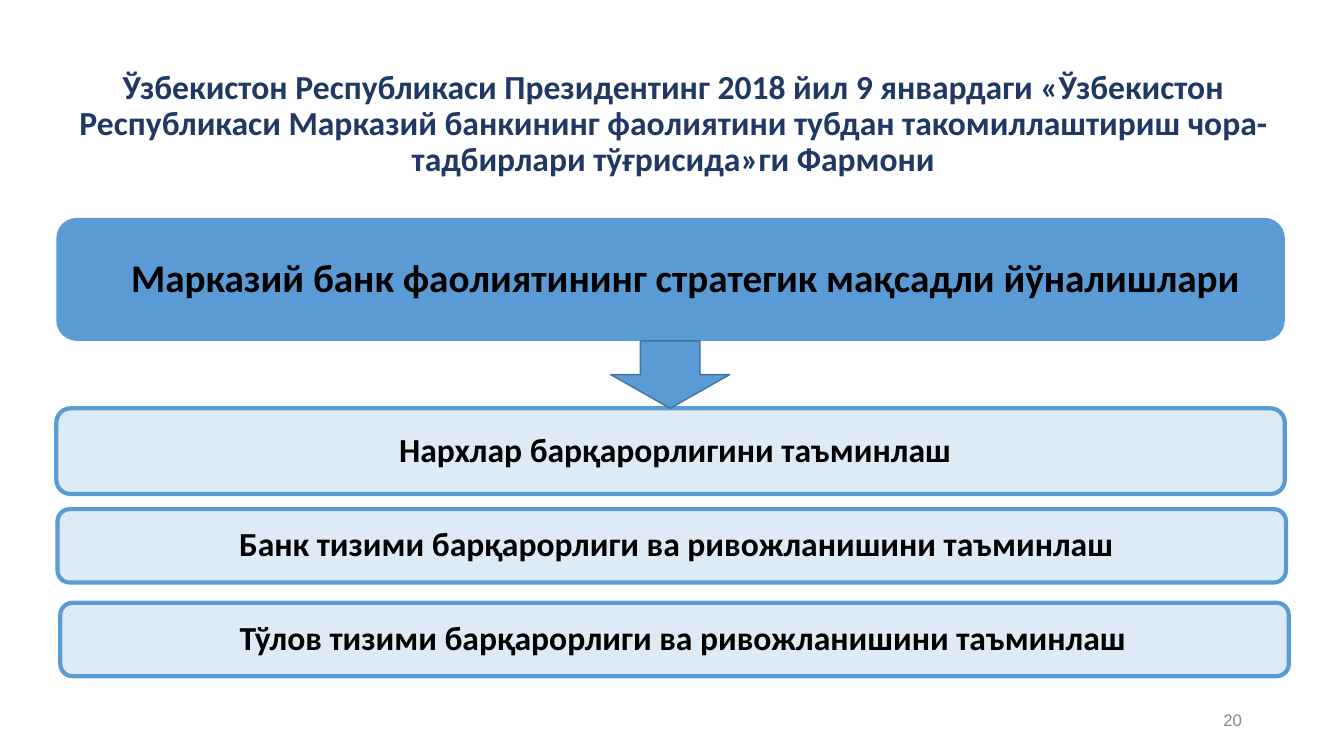
from lxml import etree
from pptx import Presentation
from pptx.dml.color import RGBColor
from pptx.enum.shapes import MSO_SHAPE
from pptx.enum.text import MSO_ANCHOR, PP_ALIGN
from pptx.oxml.ns import qn
from pptx.util import Cm, Pt

ROUNDED = MSO_SHAPE.ROUNDED_RECTANGLE
DOWN_ARROW = MSO_SHAPE.DOWN_ARROW
MIDDLE = MSO_ANCHOR.MIDDLE
CENTER = PP_ALIGN.CENTER
RIGHT = PP_ALIGN.RIGHT

NAVY = RGBColor(0x20, 0x38, 0x64)
BLUE = RGBColor(0x5B, 0x9B, 0xD5)
DARK_BLUE = RGBColor(0x43, 0x73, 0x9E)
PALE_BLUE = RGBColor(0xDE, 0xEB, 0xF7)
BLACK = RGBColor(0, 0, 0)
GREY = RGBColor(0x89, 0x89, 0x89)

TITLE = ("Ўзбекистон Республикаси Президентинг 2018 йил 9 январдаги «Ўзбекистон "
         "Республикаси Марказий банкининг фаолиятини тубдан такомиллаштириш "
         "чора-тадбирлари тўғрисида»ги Фармони")
HEADING = "Марказий банк фаолиятининг стратегик мақсадли йўналишлари"
GOALS = [
    ("Нархлар барқарорлигини таъминлаш ", (1.42, 10.29, 30.96, 2.16)),
    ("Банк тизими барқарорлиги ва ривожланишини таъминлаш ", (1.45, 12.83, 30.96, 1.85)),
    ("Тўлов тизими барқарорлиги ва ривожланишини таъминлаш", (1.52, 15.19, 30.96, 1.85)),
]


def write(shape, text, size, color, name="Calibri", bold=True, alignment=CENTER):
    frame = shape.text_frame
    frame.word_wrap = True
    frame.vertical_anchor = MIDDLE
    paragraph = frame.paragraphs[0]
    paragraph.text = text
    paragraph.alignment = alignment
    paragraph.line_spacing = 0.9
    font = paragraph.font
    font.name = name
    font.size = Pt(size)
    font.bold = bold
    font.color.rgb = color
    return paragraph


def set_indent(paragraph, left, first_line=0):
    properties = paragraph._p.get_or_add_pPr()
    properties.set("marL", str(Cm(left)))
    properties.set("indent", str(Cm(first_line)))
    return properties


def add_text(slide, box, *args, **options):
    shape = slide.shapes.add_textbox(*map(Cm, box))
    write(shape, *args, **options)


def add_filled(slide, kind, box, fill, line=None, width=1):
    shape = slide.shapes.add_shape(kind, *map(Cm, box))
    shape.shadow.inherit = False
    shape.fill.solid()
    shape.fill.fore_color.rgb = fill
    if line is None:
        shape.line.fill.background()
    else:
        shape.line.color.rgb = line
        shape.line.width = Pt(width)
    return shape


def add_heading(slide, box):
    shape = add_filled(slide, ROUNDED, box, BLUE)
    paragraph = write(shape, HEADING, 28, BLACK)
    paragraph.space_before = Pt(10)
    set_indent(paragraph, 0.74)


def add_goal(slide, text, box):
    shape = add_filled(slide, ROUNDED, box, PALE_BLUE, BLUE, 3)
    frame = shape.text_frame
    frame.margin_left = frame.margin_right = Cm(0.13)
    frame.margin_top = frame.margin_bottom = Cm(0.13)
    paragraph = write(shape, text, 24, BLACK)
    paragraph.space_before = Pt(12)
    paragraph.space_after = Pt(2)
    properties = set_indent(paragraph, 0.25, -0.25)
    bullet = etree.Element(qn("a:buChar"), char=" ")
    properties.find(qn("a:spcAft")).addnext(bullet)


def main():
    presentation = Presentation()
    presentation.slide_width = Cm(33.87)
    presentation.slide_height = Cm(19.05)
    slide = presentation.slides.add_slide(presentation.slide_layouts[6])
    add_text(slide, (1.45, 1.02, 31.04, 4.24), TITLE, 24, NAVY)
    add_text(slide, (23.93, 17.65, 7.62, 1.02), "20", 12, GREY,
             name="Arial", bold=False, alignment=RIGHT)
    add_heading(slide, (1.42, 5.49, 30.96, 3.1))
    for text, box in GOALS:
        add_goal(slide, text, box)
    add_filled(slide, DOWN_ARROW, (15.39, 8.59, 3, 1.7), BLUE, DARK_BLUE)
    presentation.save("out.pptx")


if __name__ == "__main__":
    main()
